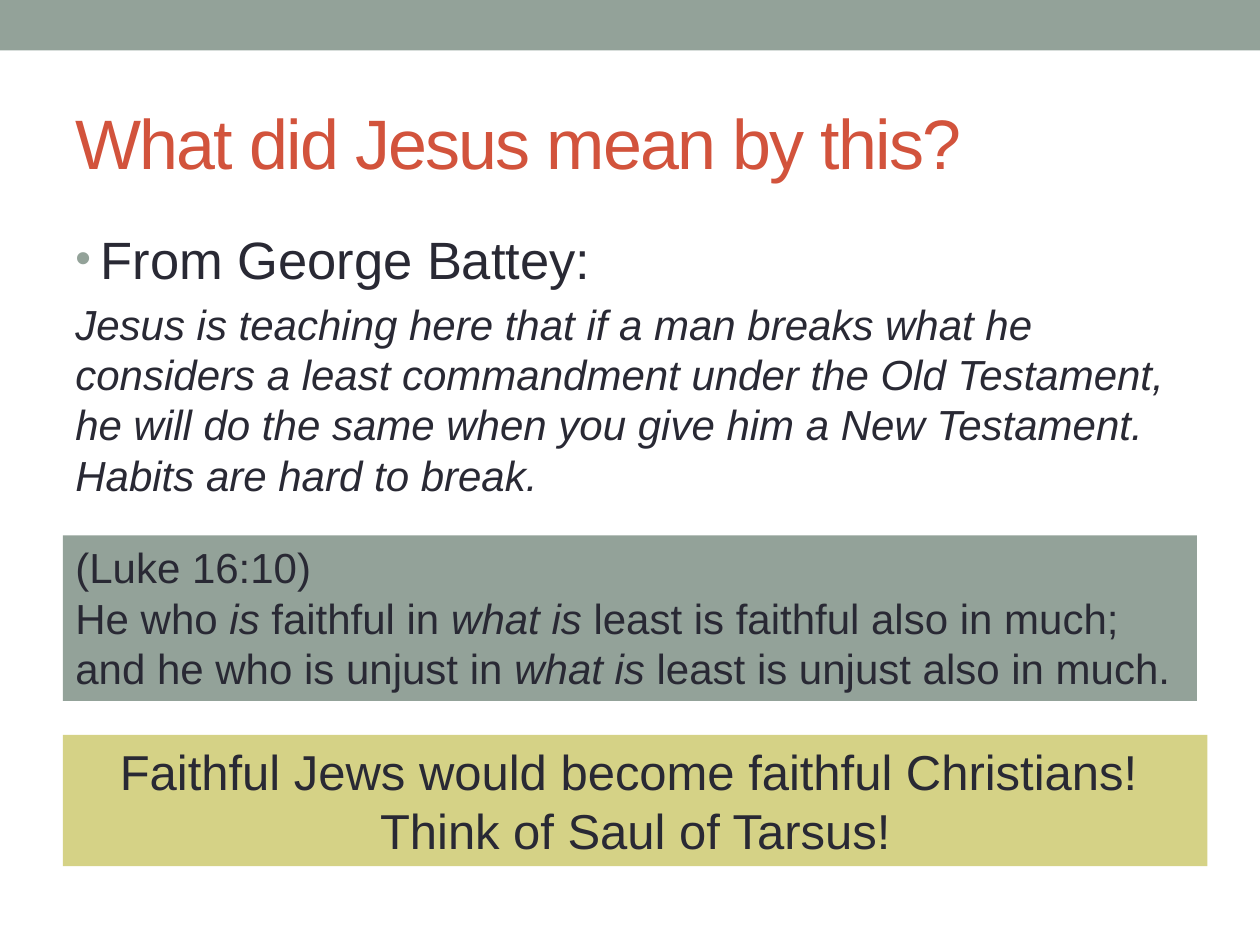
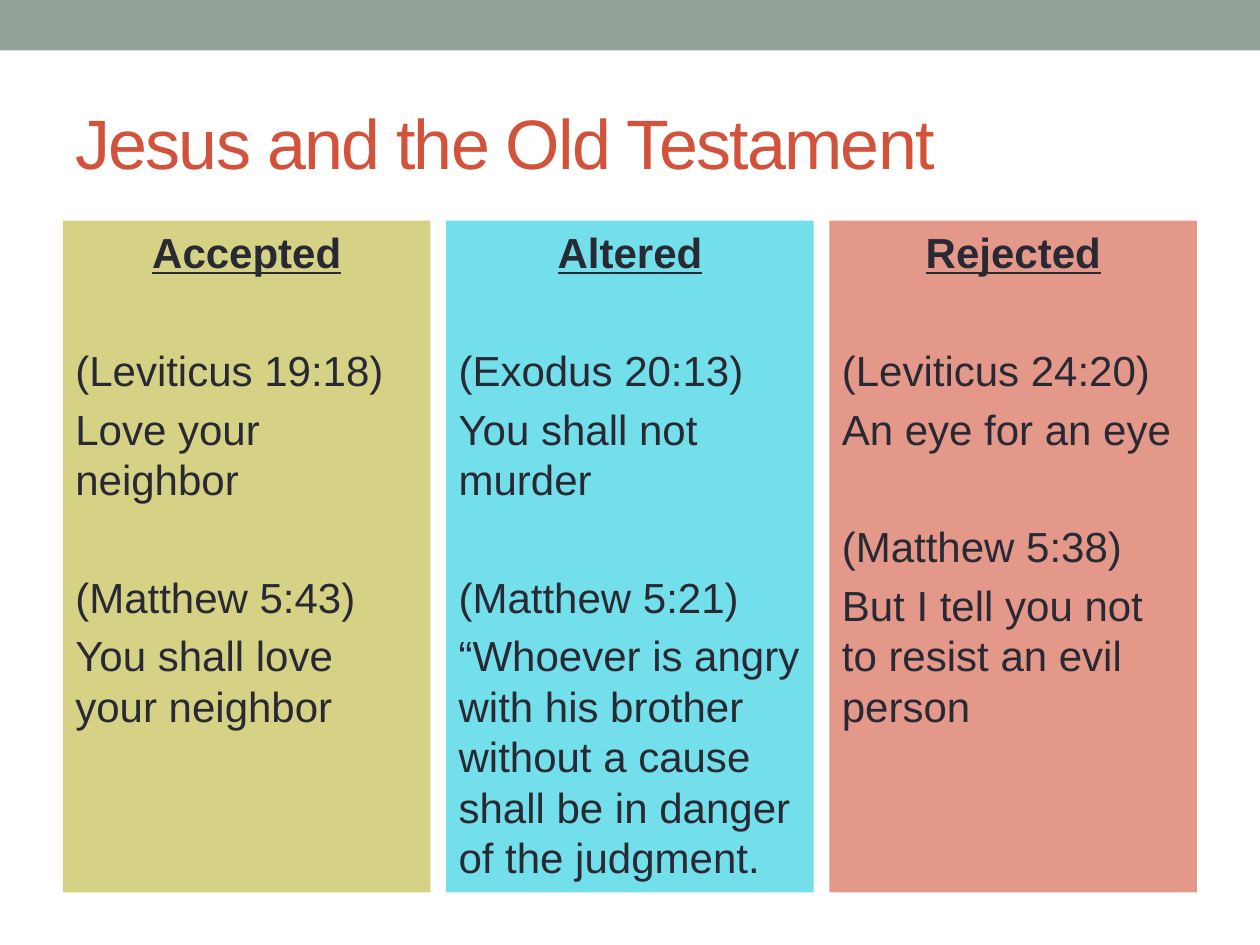
from dataclasses import dataclass

import pptx
import pptx.dml.color
import pptx.enum.shapes
import pptx.enum.text
import pptx.oxml
import pptx.oxml.ns
import pptx.shapes.autoshape
import pptx.slide
import pptx.text.text
import pptx.util

Pt = pptx.util.Pt
RGBColor = pptx.dml.color.RGBColor
ALIGN = pptx.enum.text.PP_ALIGN
ANCHOR = pptx.enum.text.MSO_ANCHOR

SAGE = RGBColor(0x93, 0xA2, 0x99)
RUST = RGBColor(0xD2, 0x53, 0x3C)
INK = RGBColor(0x29, 0x29, 0x34)
OLIVE = RGBColor(0xD5, 0xD2, 0x86)
AQUA = RGBColor(0x72, 0xDF, 0xEA)
SALMON = RGBColor(0xE4, 0x98, 0x8A)

FONT = "Arial"
SLIDE_W, SLIDE_H = 720, 540
MARGIN = 36
CONTENT_W = SLIDE_W - 2 * MARGIN
CONTENT_TOP = 126
COLUMN_GAP = 9
COLUMN_H = 384
TEXT_SIZE = 24
SPACE_RATIO = 0.2
VERSE_GAP = 38.4


@dataclass(frozen=True)
class Box:
    left: float
    top: float
    width: float
    height: float
    fill: RGBColor | None = None


@dataclass(frozen=True)
class Piece:
    text: str
    italic: bool = False


@dataclass(frozen=True)
class Para:
    pieces: tuple[Piece, ...]
    size: float = TEXT_SIZE
    color: RGBColor = INK
    before: float = 0
    align: ALIGN = ALIGN.LEFT
    heading: bool = False
    bullet: bool = False
    tracking: int = 0


@dataclass(frozen=True)
class Verse:
    reference: str
    words: str


@dataclass(frozen=True)
class Column:
    heading: str
    fill: RGBColor
    verses: tuple[Verse, ...]


COLUMNS = (
    Column("Accepted", OLIVE, (
        Verse("(Leviticus 19:18)", "Love your neighbor"),
        Verse("(Matthew 5:43)", "You shall love your neighbor"),
    )),
    Column("Altered", AQUA, (
        Verse("(Exodus 20:13)", "You shall not murder"),
        Verse("(Matthew 5:21)",
              "“Whoever is angry with his brother without a cause "
              "shall be in danger of the judgment."),
    )),
    Column("Rejected", SALMON, (
        Verse("(Leviticus 24:20)", "An eye for an eye"),
        Verse("(Matthew 5:38)", "But I tell you not to resist an evil person"),
    )),
)


def add_bullet(p: pptx.text.text._Paragraph) -> None:
    props = p._p.get_or_add_pPr()
    props.set("marL", str(Pt(14.4)))
    props.set("indent", str(Pt(-14.4)))
    ns = pptx.oxml.ns.nsdecls("a")
    for xml in (
        f'<a:buClr {ns}><a:srgbClr val="{SAGE}"/></a:buClr>',
        f'<a:buSzPct {ns} val="85000"/>',
        f'<a:buFont {ns} typeface="{FONT}"/>',
        f'<a:buChar {ns} char="•"/>',
    ):
        props.append(pptx.oxml.parse_xml(xml))


def write_para(p: pptx.text.text._Paragraph, para: Para) -> None:
    p.alignment = para.align
    p.space_before = Pt(para.before)
    if para.bullet:
        add_bullet(p)
    for piece in para.pieces:
        r = p.add_run()
        r.text = piece.text
        r.font.name = FONT
        r.font.size = Pt(para.size)
        r.font.color.rgb = para.color
        r.font.italic = piece.italic
        r.font.bold = para.heading
        r.font.underline = para.heading
        if para.tracking:
            r._r.get_or_add_rPr().set("spc", str(para.tracking))


def add_text(s: pptx.slide.Slide, box: Box, paras: list[Para],
             anchor: ANCHOR = ANCHOR.TOP) -> None:
    sp = s.shapes.add_textbox(Pt(box.left), Pt(box.top), Pt(box.width), Pt(box.height))
    if box.fill is not None:
        sp.fill.solid()
        sp.fill.fore_color.rgb = box.fill
    tf = sp.text_frame
    tf.word_wrap = True
    tf.vertical_anchor = anchor
    for i, para in enumerate(paras):
        write_para(tf.add_paragraph() if i else tf.paragraphs[0], para)


def add_slide(prs: pptx.presentation.Presentation, title: str) -> pptx.slide.Slide:
    s = prs.slides.add_slide(prs.slide_layouts[6])
    band = s.shapes.add_shape(pptx.enum.shapes.MSO_SHAPE.RECTANGLE,
                              0, 0, Pt(SLIDE_W), Pt(28.8))
    band.shadow.inherit = False
    band.fill.solid()
    band.fill.fore_color.rgb = SAGE
    band.line.fill.background()
    add_text(s, Box(MARGIN, 42, CONTENT_W, 78),
             [Para((Piece(title),), size=40, color=RUST, tracking=-100)], ANCHOR.MIDDLE)
    return s


def add_meaning_slide(prs: pptx.presentation.Presentation) -> None:
    s = add_slide(prs, "What did Jesus mean by this?")
    add_text(s, Box(MARGIN, CONTENT_TOP, CONTENT_W, 168), [
        Para((Piece("From George Battey:"),), size=30, bullet=True),
        Para((Piece("Jesus is teaching here that if a man breaks what he considers "
                    "a least commandment under the Old Testament, he will do the same "
                    "when you give him a New Testament.  Habits are hard to break.",
                    italic=True),), before=TEXT_SIZE * SPACE_RATIO),
    ])
    add_text(s, Box(MARGIN, 306, CONTENT_W, 94.5, SAGE), [
        Para((Piece("(Luke 16:10)"),)),
        Para((
            Piece("He who "),
            Piece("is", italic=True),
            Piece(" faithful in "),
            Piece("what is", italic=True),
            Piece(" least is faithful also in much; and he who is unjust in "),
            Piece("what is", italic=True),
            Piece(" least is unjust also in much."),
        )),
    ])
    add_text(s, Box(MARGIN, 420, 654, 75, OLIVE), [
        Para((Piece("Faithful Jews would become faithful Christians!  "
                    "Think of Saul of Tarsus!"),), size=28, align=ALIGN.CENTER),
    ])


def add_testament_slide(prs: pptx.presentation.Presentation) -> None:
    s = add_slide(prs, "Jesus and the Old Testament")
    width = (CONTENT_W - COLUMN_GAP * (len(COLUMNS) - 1)) / len(COLUMNS)
    for i, column in enumerate(COLUMNS):
        paras = [Para((Piece(column.heading),), align=ALIGN.CENTER, heading=True)]
        for verse in column.verses:
            paras.append(Para((Piece(verse.reference),), before=VERSE_GAP))
            paras.append(Para((Piece(verse.words),), before=TEXT_SIZE * SPACE_RATIO))
        left = MARGIN + i * (width + COLUMN_GAP)
        add_text(s, Box(left, CONTENT_TOP, width, COLUMN_H, column.fill), paras)


def main() -> None:
    prs = pptx.Presentation()
    prs.slide_width, prs.slide_height = Pt(SLIDE_W), Pt(SLIDE_H)
    add_meaning_slide(prs)
    add_testament_slide(prs)
    prs.save("out.pptx")


if __name__ == "__main__":
    main()
